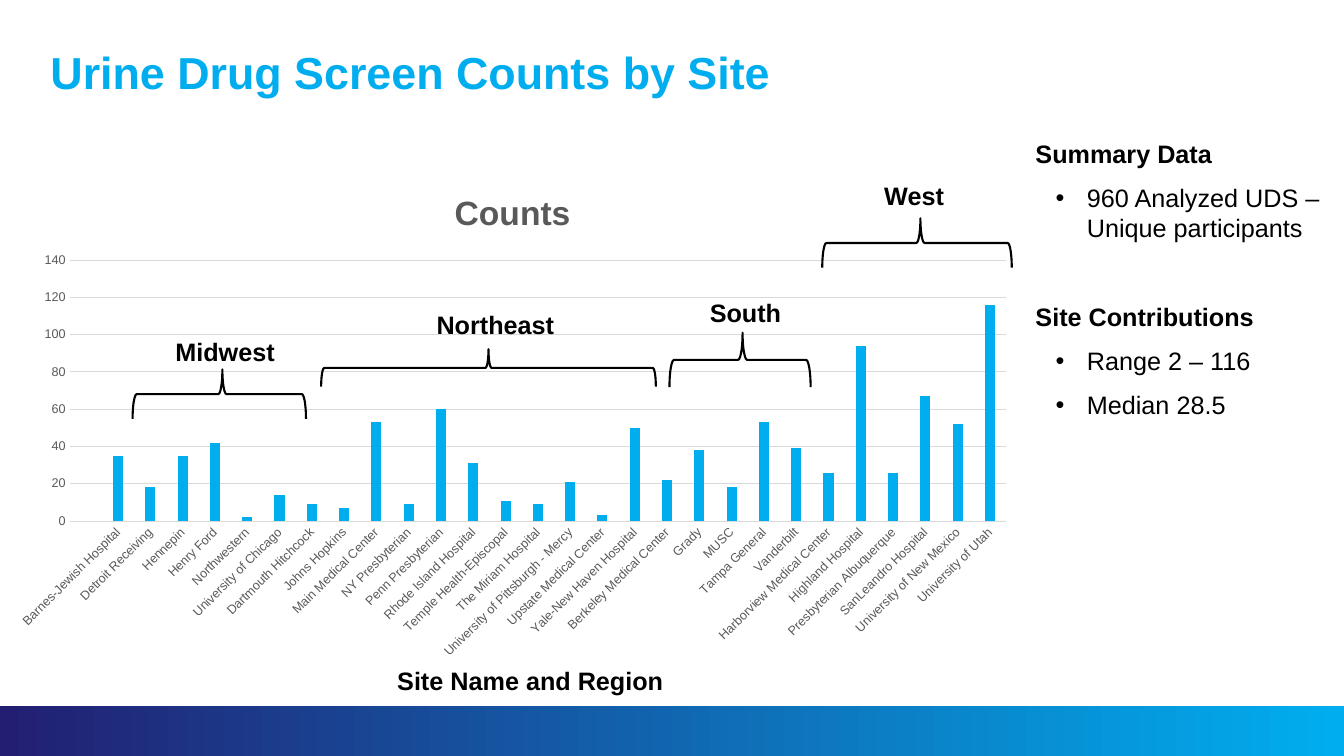
from lxml.etree import SubElement
from pptx import Presentation
from pptx.chart.data import CategoryChartData
from pptx.dml.color import RGBColor
from pptx.enum.chart import XL_CHART_TYPE, XL_TICK_MARK
from pptx.enum.shapes import MSO_SHAPE
from pptx.enum.text import MSO_ANCHOR, MSO_AUTO_SIZE, PP_ALIGN
from pptx.oxml import parse_xml
from pptx.oxml.ns import nsdecls, qn
from pptx.util import Inches, Pt

COLORS = {"cyan": "00AEEF", "navy": "221F72", "black": "000000",
          "gray": "595959", "grid": "D9D9D9"}
FONT = "Arial"

COUNTS = [
    ("", None), ("Barnes-Jewish Hospital", 35), ("Detroit Receiving", 18),
    ("Hennepin", 35), ("Henry Ford", 42), ("Northwestern", 2),
    ("University of Chicago", 14), ("Dartmouth Hitchcock", 9),
    ("Johns Hopkins", 7), ("Main Medical Center", 53), ("NY Presbyterian", 9),
    ("Penn Presbyterian", 60), ("Rhode Island Hospital", 31),
    ("Temple Health-Episcopal", 11), ("The Miriam Hospital", 9),
    ("University of Pittsburgh - Mercy", 21), ("Upstate Medical Center", 3),
    ("Yale-New Haven Hospital", 50), ("Berkeley Medical Center", 22),
    ("Grady", 38), ("MUSC", 18), ("Tampa General", 53), ("Vanderbilt", 39),
    ("Harborview Medical Center", 26), ("Highland Hospital", 94),
    ("Presbyterian Albuquerque", 26), ("SanLeandro Hospital", 67),
    ("University of New Mexico", 52), ("University of Utah", 116),
]

REGIONS = [
    ("Midwest", (1.74, 3.34), (1.93, 3.05, 0.49, 1.72), 0.518),
    ("Northeast", (4.33, 3.07), (4.66, 1.99, 0.37, 3.32), 0.5),
    ("South", (7.04, 2.95), (7.07, 2.87, 0.54, 1.4), 0.518),
    ("West", (8.77, 1.79), (8.85, 1.47, 0.49, 1.88), 0.518),
]

SUMMARY = [
    ("Summary Data", 0, 0),
    ("960 Analyzed UDS – Unique participants", 1, 0),
    ("Site Contributions", 0, 31.5),
    ("Range 2 – 116", 1, 0),
    ("Median 28.5", 1, 0),
]


class SlideBuilder:
    def __init__(self, prs):
        self.s = prs.slides.add_slide(prs.slide_layouts[1])

    def color(self, name):
        return RGBColor.from_string(COLORS[name])

    def style(self, font, size, color="black", bold=False):
        font.name, font.size, font.bold = FONT, Pt(size), bold
        font.color.rgb = self.color(color)

    def frame(self, sp, box, anchor=MSO_ANCHOR.TOP, wrap=True):
        sp.left, sp.top, sp.width, sp.height = map(Inches, box)
        tf = sp.text_frame
        tf.margin_left = tf.margin_right = tf.margin_top = tf.margin_bottom = 0
        tf.auto_size = MSO_AUTO_SIZE.NONE
        tf.word_wrap = wrap
        tf.vertical_anchor = anchor
        return tf

    def title(self, text, box):
        tf = self.frame(self.s.shapes.title, box)
        tf.text = text
        p = tf.paragraphs[0]
        p.alignment, p.line_spacing = PP_ALIGN.LEFT, 0.9
        self.style(p.runs[0].font, 32, "cyan", True)

    def body(self, items, box):
        tf = self.frame(self.s.placeholders[1], box)
        for i, (text, level, before) in enumerate(items):
            p = tf.paragraphs[0] if i == 0 else tf.add_paragraph()
            p.text, p.level = text, level
            pPr = p._p.get_or_add_pPr()
            pPr.set("marL", str(Inches(0.51 * level)))
            pPr.set("indent", str(Inches(-0.31 * level)))
            if level:
                SubElement(pPr, qn("a:buFont"), typeface=FONT)
                SubElement(pPr, qn("a:buChar"), char="•")
            else:
                SubElement(pPr, qn("a:buNone"))
            p.space_before, p.space_after = Pt(before), Pt(10)
            self.style(p.runs[0].font, 18, bold=not level)

    def label(self, text, left, top, align=PP_ALIGN.LEFT, anchor=MSO_ANCHOR.TOP):
        box = (left, top, 1, 1)
        sp = self.s.shapes.add_textbox(*map(Inches, box))
        tf = self.frame(sp, box, anchor, False)
        tf.text = text
        p = tf.paragraphs[0]
        p.alignment = align
        self.style(p.runs[0].font, 18, bold=True)

    def shape(self, kind, box):
        sp = self.s.shapes.add_shape(kind, *map(Inches, box))
        sp.shadow.inherit = False
        return sp

    def band(self, box):
        sp = self.shape(MSO_SHAPE.RECTANGLE, box)
        sp.line.fill.background()
        sp.fill.gradient()
        sp.fill.gradient_angle = 0
        for stop, name in zip(sp.fill.gradient_stops, ("navy", "cyan")):
            stop.color.rgb = self.color(name)

    def brace(self, box, tip):
        sp = self.shape(MSO_SHAPE.RIGHT_BRACE, box)
        sp.rotation = 270
        sp.adjustments[0], sp.adjustments[1] = 0.083, tip
        sp.fill.background()
        sp.line.color.rgb = self.color("black")
        sp.line.width = Pt(1.5)

    def layout(self, parent, index, size, target="", **places):
        for old in parent.findall(qn("c:layout")):
            parent.remove(old)
        layout = parse_xml(f"<c:layout {nsdecls('c')}><c:manualLayout/></c:layout>")
        if target:
            SubElement(layout[0], qn("c:layoutTarget"), val=target)
        for key in ("x", "y"):
            SubElement(layout[0], qn(f"c:{key}Mode"), val="edge")
        for (key, inches), whole in zip(places.items(), size * 2):
            SubElement(layout[0], qn(f"c:{key}"), val=str(inches / whole))
        parent.insert(index, layout)

    def chart(self, counts, box):
        data = CategoryChartData()
        data.categories = [site for site, _ in counts]
        data.add_series("Series 1", [value for _, value in counts])
        chart = self.s.shapes.add_chart(
            XL_CHART_TYPE.COLUMN_CLUSTERED, *map(Inches, box), data).chart
        self.style(chart.font, 10)
        chart.has_legend = False
        chart.has_title = True
        tf = chart.chart_title.text_frame
        tf.text = "Counts"
        self.style(tf.paragraphs[0].runs[0].font, 24, "gray", True)
        size = box[2:]
        self.layout(chart.chart_title._element, 1, size, x=4.45, y=0.15)

        plot = chart.plots[0]
        plot.gap_width, plot.overlap = 219, -27
        plot.vary_by_categories = False
        fill = plot.series[0].format.fill
        fill.solid()
        fill.fore_color.rgb = self.color("cyan")

        cat, val = chart.category_axis, chart.value_axis
        for axis in (cat, val):
            axis.major_tick_mark = axis.minor_tick_mark = XL_TICK_MARK.NONE
            self.style(axis.tick_labels.font, 9, "gray")
        cat._element.find(qn("c:txPr")).find(qn("a:bodyPr")).set("rot", "-2700000")
        val.minimum_scale, val.maximum_scale, val.major_unit = 0, 140, 20
        val.format.line.fill.background()
        for line in (cat.format.line, val.major_gridlines.format.line):
            line.color.rgb = self.color("grid")
            line.width = Pt(0.75)
        plot_area = cat._element.getparent()
        self.layout(plot_area, 0, size, "inner", x=0.69, y=0.9, w=9.29, h=2.59)


def main():
    prs = Presentation()
    prs.slide_width, prs.slide_height = Inches(13.33), Inches(7.5)
    b = SlideBuilder(prs)
    b.band((0, 7, 13.33, 0.5))
    b.chart(COUNTS, (0, 1.68, 10.18, 4.96))
    b.title("Urine Drug Screen Counts by Site", (0.5, 0.5, 12.33, 0.42))
    b.body(SUMMARY, (10.27, 1.37, 3.01, 5.08))
    b.label("Site Name and Region", 4.76, 6.25, PP_ALIGN.CENTER, MSO_ANCHOR.MIDDLE)
    for name, (left, top), box, tip in REGIONS:
        b.brace(box, tip)
        b.label(name, left, top)
    prs.save("out.pptx")


if __name__ == "__main__":
    main()
